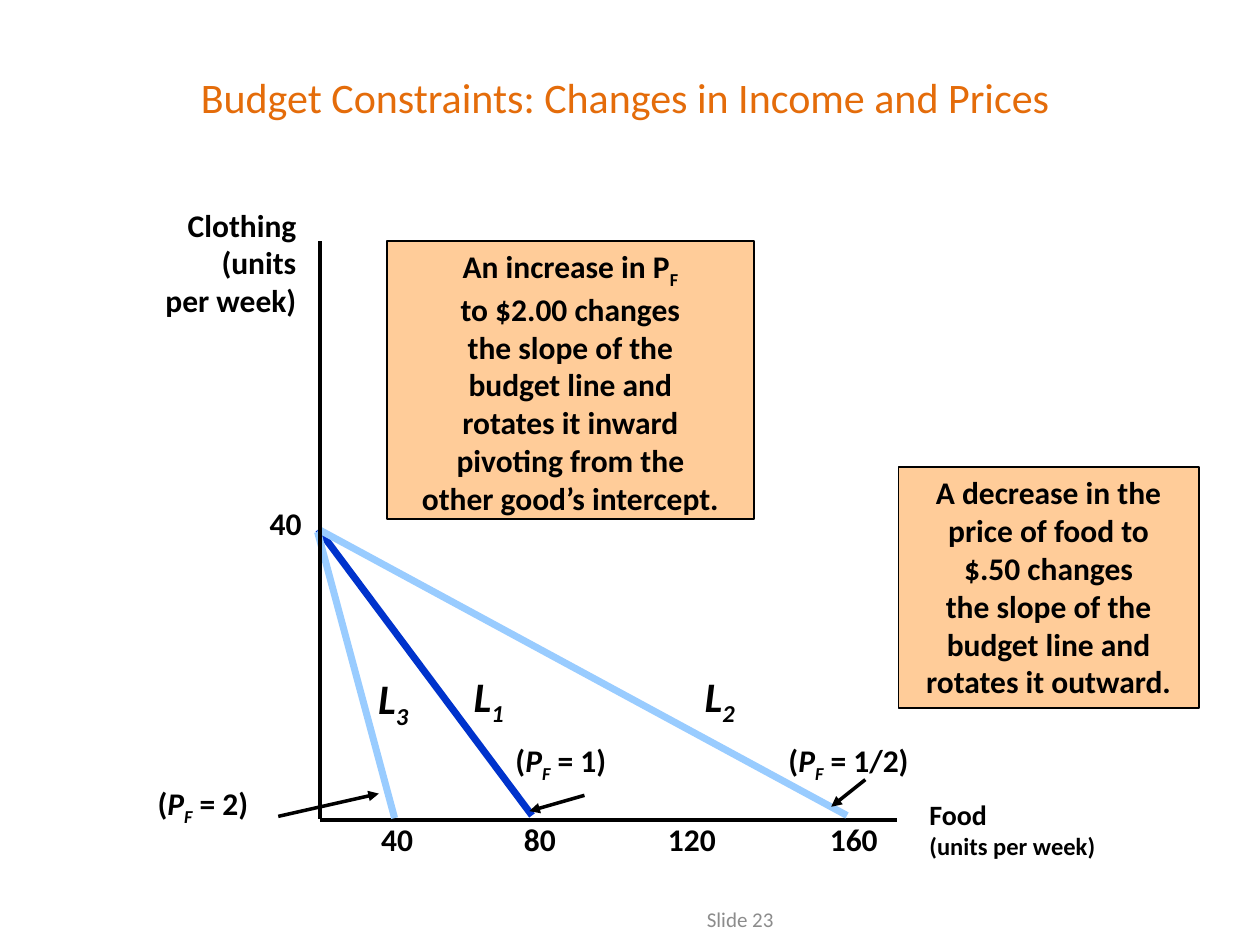
from lxml import etree
from pptx import Presentation
from pptx.dml.color import RGBColor
from pptx.enum import shapes, text
from pptx.oxml import ns
from pptx.util import Pt

FONT = "Calibri"
BLACK = RGBColor(0x00, 0x00, 0x00)
GREY = RGBColor(0x8C, 0x8C, 0x8C)
ORANGE = RGBColor(0xE4, 0x6C, 0x0A)
PEACH = RGBColor(0xFF, 0xCC, 0x99)
DARK_BLUE = RGBColor(0x00, 0x33, 0xCC)
LIGHT_BLUE = RGBColor(0x99, 0xCC, 0xFF)

LEFT, CENTER, RIGHT = text.PP_ALIGN.LEFT, text.PP_ALIGN.CENTER, text.PP_ALIGN.RIGHT

TICKS = [(228, "40"), (309.5, "80"), (396.5, "120"), (489, "160")]
INCREASE_NOTE = [
    "An increase in P", "to $2.00 changes", "the slope of the", "budget line and",
    "rotates it inward", "pivoting from the", "other good’s intercept.",
]
DECREASE_NOTE = [
    "A decrease in the", "price of food to", "$.50 changes",
    "the slope of the", "budget line and", "rotates it outward.",
]


def format_span(span, size, color=BLACK, bold=True, italic=False, subscript=False):
    font = span.font
    font.name, font.size, font.bold, font.italic = FONT, Pt(size), bold, italic
    font.color.rgb = color
    if subscript:
        span._r.get_or_add_rPr().set("baseline", "-25000")


def add_span(para, words, size, **style):
    span = para.add_run()
    span.text = words
    format_span(span, size, **style)


def fill_frame(frame, lines, size, align, **style):
    frame.text = "\n".join(lines)
    for para in frame.paragraphs:
        para.alignment = align
        for span in para.runs:
            format_span(span, size, **style)


def add_label(page, area, lines, size=18, align=LEFT, **style):
    box = page.shapes.add_textbox(*map(Pt, area))
    box.text_frame.word_wrap = False
    fill_frame(box.text_frame, lines, size, align, **style)
    return box


def add_note(page, area, lines):
    box = page.shapes.add_shape(shapes.MSO_SHAPE.RECTANGLE, *map(Pt, area))
    box.shadow.inherit = False
    box.fill.solid()
    box.fill.fore_color.rgb = PEACH
    box.line.color.rgb = BLACK
    box.line.width = Pt(1)
    box.text_frame.word_wrap = False
    box.text_frame.vertical_anchor = text.MSO_ANCHOR.TOP
    fill_frame(box.text_frame, lines, 18, CENTER)
    return box


def add_line(page, start, end, color=BLACK, width=2, arrow=False):
    line = page.shapes.add_connector(
        shapes.MSO_CONNECTOR.STRAIGHT, *map(Pt, start + end))
    line.line.color.rgb = color
    line.line.width = Pt(width)
    if arrow:
        etree.SubElement(line.line._get_or_add_ln(), ns.qn("a:tailEnd"), type="triangle")
    etree.SubElement(line._element.spPr, ns.qn("a:effectLst"))


def add_budget_line(page, start, end, color, index, name_at, price, price_area, arrow):
    """Draw a budget line with its name, its food price and the arrow from the price."""
    add_line(page, start, end, color, 4)
    name = add_label(page, name_at + (37.5, 36), ["L"], 24, italic=True)
    add_span(name.text_frame.paragraphs[0], index, 24, italic=True, subscript=True)

    para = add_label(page, price_area, ["("]).text_frame.paragraphs[0]
    add_span(para, "P", 18, italic=True)
    add_span(para, "F", 18, italic=True, subscript=True)
    add_span(para, f" = {price})", 18)
    add_line(page, *arrow, arrow=True)


def add_title(page, words):
    title = page.shapes.title
    title.left, title.top, title.width, title.height = map(Pt, (43, 25, 628.5, 61))
    title.text_frame.vertical_anchor = text.MSO_ANCHOR.MIDDLE
    fill_frame(title.text_frame, [words], 24, CENTER, color=ORANGE, bold=False)


def main():
    deck = Presentation()
    deck.slide_width, deck.slide_height = Pt(720), Pt(540)
    page = deck.slides.add_slide(deck.slide_layouts[5])

    add_title(page, "Budget Constraints: Changes in Income and Prices")
    number = add_label(page, (282, 510.5, 282, 29), ["Slide 23"], 12, CENTER,
                       color=GREY, bold=False)
    number.text_frame.vertical_anchor = text.MSO_ANCHOR.MIDDLE

    add_line(page, (183, 468.5), (512.5, 468.5))
    food = add_label(page, (524, 452, 120, 43), ["Food", "(units per week)"], 16)
    food.text_frame.paragraphs[1].runs[0].font.size = Pt(14)
    add_label(page, (79, 114, 97.5, 72), ["Clothing", "(units", "per week)"], align=RIGHT)
    for center, value in TICKS:
        width = 16 + 9.25 * len(value)
        add_label(page, (center - width / 2, 465, width, 29), [value])
    add_label(page, (147, 284.5, 36.5, 31), ["40"])

    add_budget_line(page, (182, 302.5), (304, 466), DARK_BLUE, "1", (263.5, 379.5),
                    "1", (287.5, 420, 82.5, 31), ((334, 454.5), (302.5, 463.5)))
    increase = add_note(page, (221, 137.5, 210, 159), INCREASE_NOTE)
    add_span(increase.text_frame.paragraphs[0], "F", 18, subscript=True)
    add_budget_line(page, (181.5, 304), (225.5, 467.5), LIGHT_BLUE, "3", (209, 381),
                    "2", (83, 444.5, 80.5, 31), ((159, 466.5), (216.5, 453.5)))
    add_budget_line(page, (182, 302.5), (484, 466), LIGHT_BLUE, "2", (395.5, 379.5),
                    "1/2", (443.5, 420, 99.5, 31), ((494.5, 445.5), (475, 461)))
    add_note(page, (513.5, 267, 171.5, 137.5), DECREASE_NOTE)
    add_line(page, (183, 138), (183, 468))

    deck.save("out.pptx")


if __name__ == "__main__":
    main()
